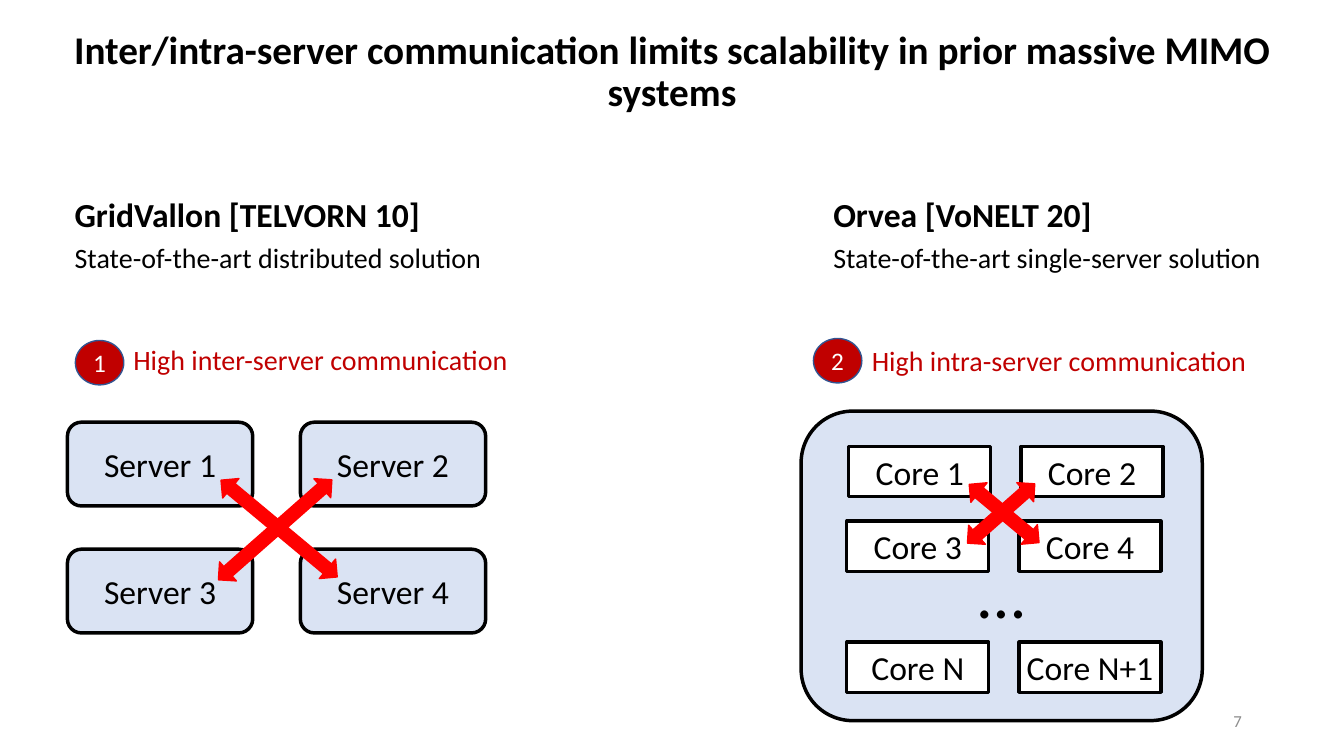
import pptx
import pptx.dml.color
import pptx.enum.shapes
import pptx.enum.text
import pptx.util

Cm = pptx.util.Cm
Pt = pptx.util.Pt
SHAPE = pptx.enum.shapes.MSO_SHAPE
ALIGN = pptx.enum.text.PP_ALIGN
ANCHOR = pptx.enum.text.MSO_ANCHOR
COLORS = {
    "black": "000000", "white": "FFFFFF", "gray": "8C8C8C", "pale_blue": "DAE3F3",
    "dark_red": "C00000", "navy": "325491", "red": "FF0000",
}


def write_text(shape, text, size, color="black", bold=False, align=ALIGN.LEFT,
               anchor=ANCHOR.TOP, inset=None):
    frame = shape.text_frame
    frame.word_wrap = True
    frame.vertical_anchor = anchor
    if inset is not None:
        for side in ("left", "top", "right", "bottom"):
            setattr(frame, f"margin_{side}", Cm(inset))
    paragraph = frame.paragraphs[0]
    paragraph.alignment = align
    run = paragraph.add_run()
    run.text = text
    font_format = {"name": "Calibri", "size": Pt(size), "bold": bold}
    for attribute, value in font_format.items():
        setattr(run.font, attribute, value)
    run.font.color.rgb = pptx.dml.color.RGBColor.from_string(COLORS[color])


def add_box(kind, box, fill, line, line_width):
    """Add a flat preset shape; box is left, top, width, height in cm."""
    shape = slide.shapes.add_shape(kind, *map(Cm, box))
    shape.shadow.inherit = False
    shape.fill.solid()
    shape.fill.fore_color.rgb = pptx.dml.color.RGBColor.from_string(COLORS[fill])
    shape.line.color.rgb = pptx.dml.color.RGBColor.from_string(COLORS[line])
    shape.line.width = Pt(line_width)
    return shape


presentation = pptx.Presentation()
presentation.slide_width = Cm(33.87)
presentation.slide_height = Cm(19.05)
slide = presentation.slides.add_slide(presentation.slide_layouts[5])
centered = {"align": ALIGN.CENTER, "anchor": ANCHOR.MIDDLE}

title = slide.shapes.title
title_box = {"left": 0, "top": 0, "width": 33.87, "height": 3.68}
for attribute, value in title_box.items():
    setattr(title, attribute, Cm(value))
write_text(title, "Inter/intra-server communication limits scalability in prior massive MIMO systems",
           28, bold=True, **centered)
title.text_frame.paragraphs[0].line_spacing = 0.9

page_number = slide.shapes.add_textbox(Cm(23.93), Cm(17.65), Cm(7.62), Cm(1.02))
write_text(page_number, "7", 12, "gray", align=ALIGN.RIGHT, anchor=ANCHOR.MIDDLE)

# Headings and numbered problems of the two systems
systems = [
    (1.63, "GridVallon [TELVORN 10]", "State-of-the-art distributed solution",
     "1", (1.9, 8.58), "High inter-server communication", (3.11, 8.51)),
    (20.75, "Orvea [VoNELT 20]", "State-of-the-art single-server solution",
     "2", (20.5, 8.53), "High intra-server communication", (21.72, 8.54)),
]
for left, name, summary, number, badge_place, problem, problem_place in systems:
    heading = slide.shapes.add_textbox(Cm(left), Cm(4.75), Cm(10.52), Cm(1.27))
    write_text(heading, name, 24, bold=True)
    subheading = slide.shapes.add_textbox(Cm(left), Cm(5.93), Cm(11.48), Cm(1.12))
    write_text(subheading, summary, 20)
    badge = add_box(SHAPE.OVAL, (*badge_place, 1.22, 1.12), "dark_red", "navy", 1)
    write_text(badge, number, 18, "white", **centered)
    label = slide.shapes.add_textbox(*map(Cm, problem_place), Cm(10.26), Cm(1.12))
    write_text(label, problem, 20, "dark_red")

# Distributed servers
for index in range(4):
    row, column = divmod(index, 2)
    server = add_box(SHAPE.ROUNDED_RECTANGLE,
                     (1.7 + 5.87 * column, 10.64 + 3.2 * row, 4.67, 2.11),
                     "pale_blue", "black", 2.5)
    write_text(server, f"Server {index + 1}", 24, **centered)

# Single server with its cores
add_box(SHAPE.ROUNDED_RECTANGLE, (20.19, 10.36, 10.11, 7.8), "pale_blue", "black", 2.5)
core_rows = [
    (21.39, 11.25, ("Core 1", "Core 2")),
    (21.34, 13.13, ("Core 3", "Core 4")),
    (21.34, 16.18, ("Core N", "Core N+1")),
]
for left, top, names in core_rows:
    for column, name in enumerate(names):
        core = add_box(SHAPE.RECTANGLE, (left + 4.34 * column, top, 3.58, 1.27),
                       "white", "black", 2.25)
        write_text(core, name, 24, inset=0, **centered)
more_cores = slide.shapes.add_textbox(Cm(24.41), Cm(13.77), Cm(2.03), Cm(2.31))
write_text(more_cores, "…", 48)

# Crossed communication arrows
arrows = [
    (5.13, 13.0, 3.81, 39.8), (5.03, 13.03, 3.81, 318.6),
    (24.16, 12.62, 2.29, 39.8), (24.1, 12.62, 2.26, 318.6),
]
for left, top, length, angle in arrows:
    arrow = add_box(SHAPE.LEFT_RIGHT_ARROW, (left, top, length, 0.64), "red", "red", 1)
    arrow.rotation = angle

presentation.save("out.pptx")
